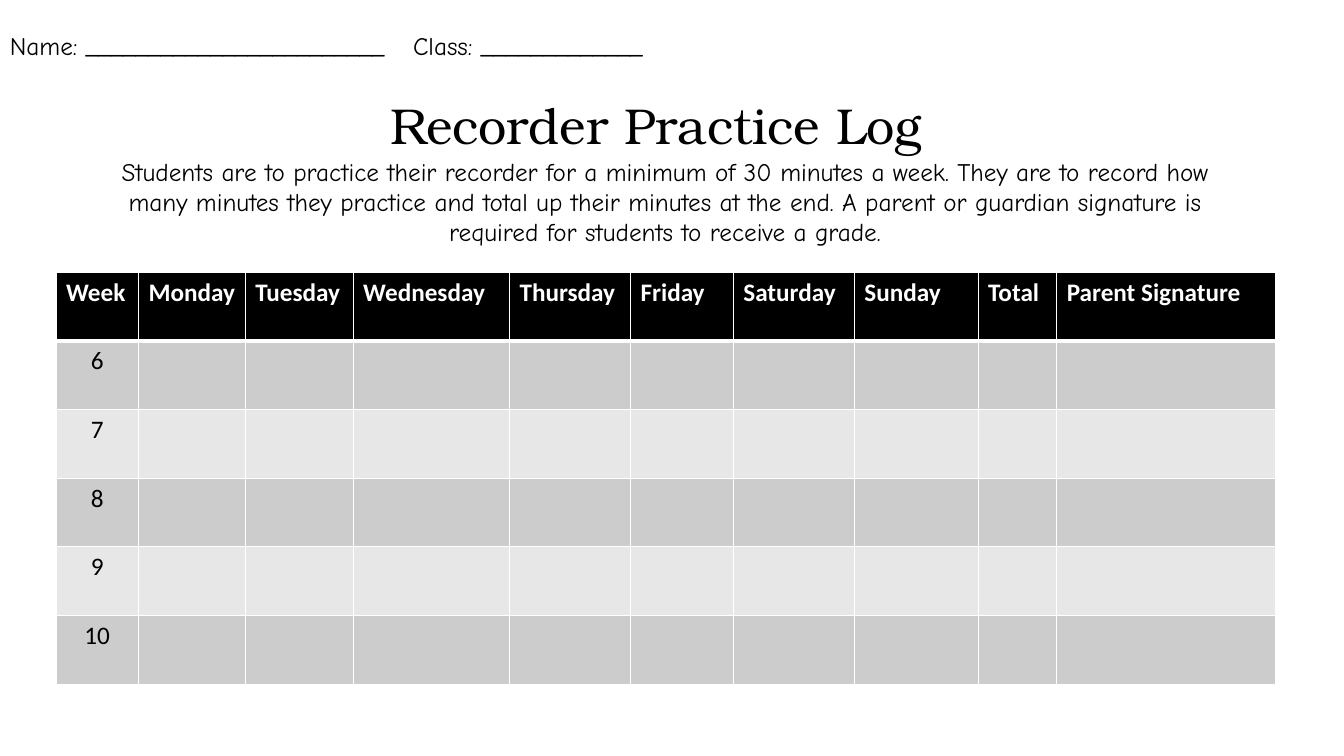
"""Build a one-page weekly recorder practice log."""
import pptx
import pptx.dml.color
import pptx.enum.text
import pptx.oxml
import pptx.oxml.ns
import pptx.util
from pptx.util import Cm

BLACK = pptx.dml.color.RGBColor(0x00, 0x00, 0x00)
WHITE = pptx.dml.color.RGBColor(0xFF, 0xFF, 0xFF)
DARK_BAND = pptx.dml.color.RGBColor(0xCC, 0xCC, 0xCC)
LIGHT_BAND = pptx.dml.color.RGBColor(0xE7, 0xE7, 0xE7)
LEFT = pptx.enum.text.PP_ALIGN.LEFT
CENTER = pptx.enum.text.PP_ALIGN.CENTER


def write(frame, text, font, size, color, align, bold=False):
    para = frame.paragraphs[0]
    para.alignment = align
    span = para.add_run()
    span.text = text
    span.font.name = font
    span.font.size = pptx.util.Pt(size)
    span.font.bold = bold
    span.font.color.rgb = color


def add_border(cell, side, points):
    cell._tc.get_or_add_tcPr().append(pptx.oxml.parse_xml(
        f'<a:{side} {pptx.oxml.ns.nsdecls("a")} w="{points * 12700}">'
        f'<a:solidFill><a:srgbClr val="{WHITE}"/></a:solidFill></a:{side}>'))


deck = pptx.Presentation()
deck.slide_width = Cm(33.87)
deck.slide_height = Cm(19.05)
page = deck.slides.add_slide(deck.slide_layouts[5])

title = page.shapes.title
title.left, title.top, title.width, title.height = Cm(8.46), Cm(2.24), Cm(16.15), Cm(1.8)
name_line = page.shapes.add_textbox(Cm(0), Cm(0.64), Cm(22.81), Cm(1.02))
instructions = page.shapes.add_textbox(Cm(2.03), Cm(3.81), Cm(29.46), Cm(2.57))

texts = [
    (name_line, "Name: ________________________\tClass: _____________",
     "Comic Neue", 18, LEFT),
    (title, "Recorder Practice Log", "TeX Gyre Bonum", 36, CENTER),
    (instructions,
     "Students are to practice their recorder for a minimum of 30 minutes a week. "
     "They are to record how many minutes they practice and total up their minutes "
     "at the end. A parent or guardian signature is required for students to "
     "receive a grade.", "Comic Neue", 18, CENTER),
]
for box, text, font, size, align in texts:
    frame = box.text_frame
    frame.word_wrap = True
    frame.auto_size = pptx.enum.text.MSO_AUTO_SIZE.SHAPE_TO_FIT_TEXT
    frame.vertical_anchor = pptx.enum.text.MSO_ANCHOR.TOP
    write(frame, text, font, size, BLACK, align)

columns = [
    ("Week", 2.08), ("Monday", 2.69), ("Tuesday", 2.72), ("Wednesday", 3.94),
    ("Thursday", 3.05), ("Friday", 2.59), ("Saturday", 3.05), ("Sunday", 3.12),
    ("Total", 1.98), ("Parent Signature", 5.51),
]
weeks = range(6, 11)
log = page.shapes.add_table(len(weeks) + 1, len(columns),
                            Cm(1.41), Cm(6.86), Cm(30.73), Cm(10.38)).table
for row in log.rows:
    row.height = Cm(1.73)
for index, (heading, width) in enumerate(columns):
    log.columns[index].width = Cm(width)
    write(log.cell(0, index).text_frame, heading, "Calibri", 18, WHITE, LEFT, True)
for index, week in enumerate(weeks, 1):
    write(log.cell(index, 0).text_frame, str(week), "Calibri", 18, BLACK, CENTER)

for index, row in enumerate(log.rows):
    band = BLACK if index == 0 else DARK_BAND if index % 2 else LIGHT_BAND
    for cell in row.cells:
        add_border(cell, "lnL", 1)
        add_border(cell, "lnR", 1)
        add_border(cell, "lnT", 3 if index == 1 else 1)
        add_border(cell, "lnB", 3 if index == 0 else 1)
        cell.fill.solid()
        cell.fill.fore_color.rgb = band

deck.save("out.pptx")
